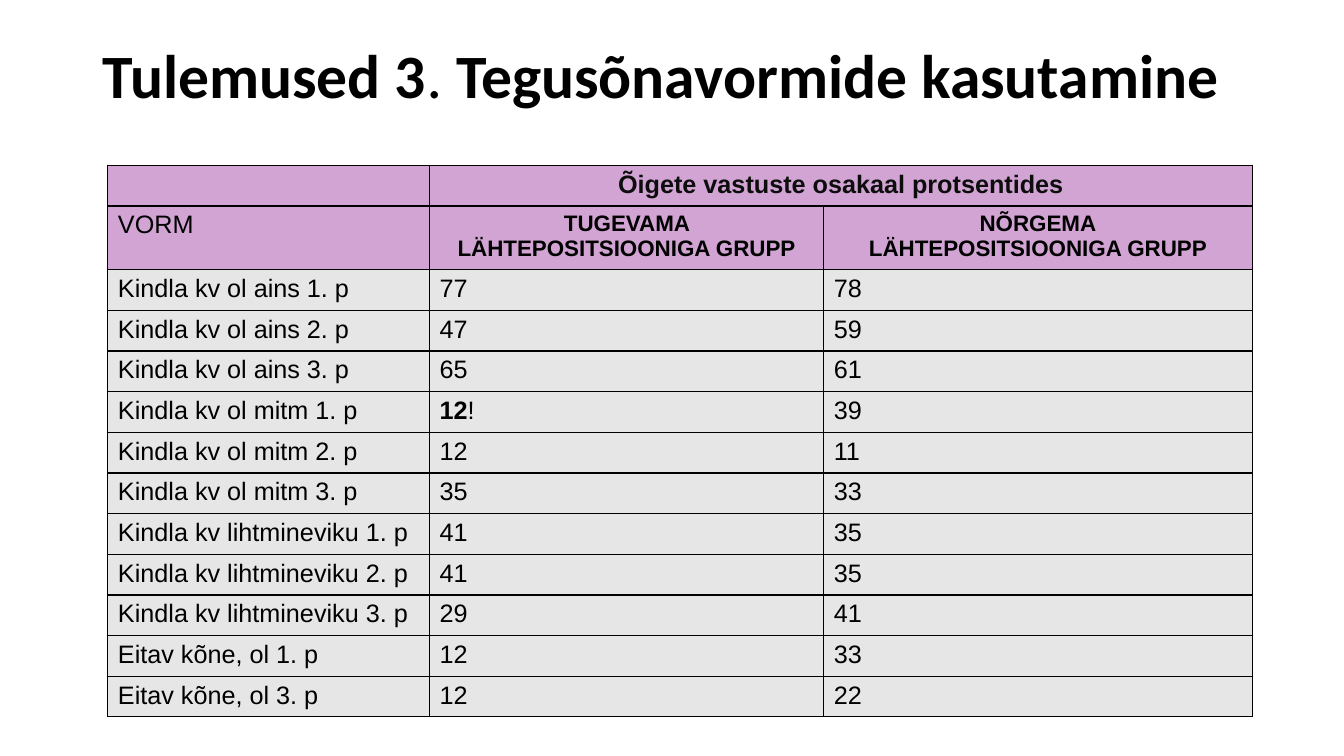
from pptx import Presentation, util as u
from pptx.dml.color import RGBColor
from pptx.enum import text as t
from pptx.oxml import parse_xml
from pptx.oxml.ns import nsdecls

BLACK = RGBColor(0x00, 0x00, 0x00)
DARK = RGBColor(0x0D, 0x0D, 0x0D)
LILAC = RGBColor(0xD2, 0xA4, 0xD4)
GREY = RGBColor(0xE7, 0xE6, 0xE6)

COLS = [3.19, 3.91, 4.25]
ROW, HEAD = 0.4, 0.63
TALL = 5.47
FORMS = [
    ("Kindla kv ol ains 1. p", "77", "78"),
    ("Kindla kv ol ains 2. p", "47", "59"),
    ("Kindla kv ol ains 3. p", "65", "61"),
    ("Kindla kv ol mitm 1. p", "12!", "39"),
    ("Kindla kv ol mitm 2. p", "12", "11"),
    ("Kindla kv ol mitm 3. p", "35", "33"),
    ("Kindla kv lihtmineviku 1. p", "41", "35"),
    ("Kindla kv lihtmineviku 2. p", "41", "35"),
    ("Kindla kv lihtmineviku 3. p", "29", "41"),
    ("Eitav kõne, ol 1. p", "12", "33"),
    ("Eitav kõne, ol 3. p", "12", "22"),
]
GROUPS = ["VORM", "TUGEVAMA LÄHTEPOSITSIOONIGA GRUPP",
          "NÕRGEMA\nLÄHTEPOSITSIOONIGA GRUPP"]
ROWS = [("", "Õigete vastuste osakaal protsentides", ""), GROUPS, *FORMS]


def write(para, parts, size, face="Arial", color=BLACK):
    """Add (words, bold) parts to a paragraph as runs."""
    for words, bold in parts:
        run = para.add_run()
        run.text = words
        look = {"size": u.Pt(size), "name": face, "bold": bold}
        for key, value in look.items():
            setattr(run.font, key, value)
        run.font.color.rgb = color


def edge(cell):
    """Draw a thin black line on all four sides of a cell."""
    props = cell._tc.get_or_add_tcPr()
    for side in "LRTB":
        props.append(parse_xml(
            f'<a:ln{side} {nsdecls("a")} w="{u.Pt(0.96)}"><a:solidFill>'
            f'<a:srgbClr val="{BLACK}"/></a:solidFill></a:ln{side}>'))


deck = Presentation()
deck.slide_width, deck.slide_height = u.Inches(13.33), u.Inches(7.5)
slide = deck.slides.add_slide(deck.slide_layouts[6])

# Title
box = slide.shapes.add_textbox(*map(u.Inches, (0.92, 0.4, 11.5, 1.45)))
frame = box.text_frame
frame.word_wrap = True
frame.vertical_anchor = t.MSO_ANCHOR.TOP
title = frame.paragraphs[0]
title.line_spacing = 0.9
write(title, [("Tulemused 3", True), (". ", False),
              ("Tegusõnavormide kasutamine", True)], 44, "Calibri")

# Table of results
table = slide.shapes.add_table(
    len(ROWS), len(COLS), u.Inches(1.07), u.Inches(1.64),
    u.Inches(sum(COLS)), u.Inches(TALL)).table
for col, wide in zip(table.columns, COLS):
    col.width = u.Inches(wide)
for row in table.rows:
    row.height = u.Inches((TALL - HEAD) / (len(ROWS) - 1))
table.rows[1].height = u.Inches(HEAD)
table.cell(0, 1).merge(table.cell(0, 2))

for r, row in enumerate(ROWS):
    for c, words in enumerate(row):
        cell = table.cell(r, c)
        edge(cell)
        cell.fill.solid()
        cell.fill.fore_color.rgb = LILAC if r < 2 else GREY
        head = r < 2 and c > 0
        for n, line in enumerate(words.split("\n") if words else []):
            frame = cell.text_frame
            para = frame.add_paragraph() if n else frame.paragraphs[0]
            para.alignment = t.PP_ALIGN.CENTER if head else t.PP_ALIGN.LEFT
            parts = [(line, head)]
            if line.endswith("!"):
                parts = [(line[:-1], True), ("!", False)]
            write(para, parts, 16 if head and r == 1 else 18,
                  color=BLACK if r else DARK)

deck.save("out.pptx")
